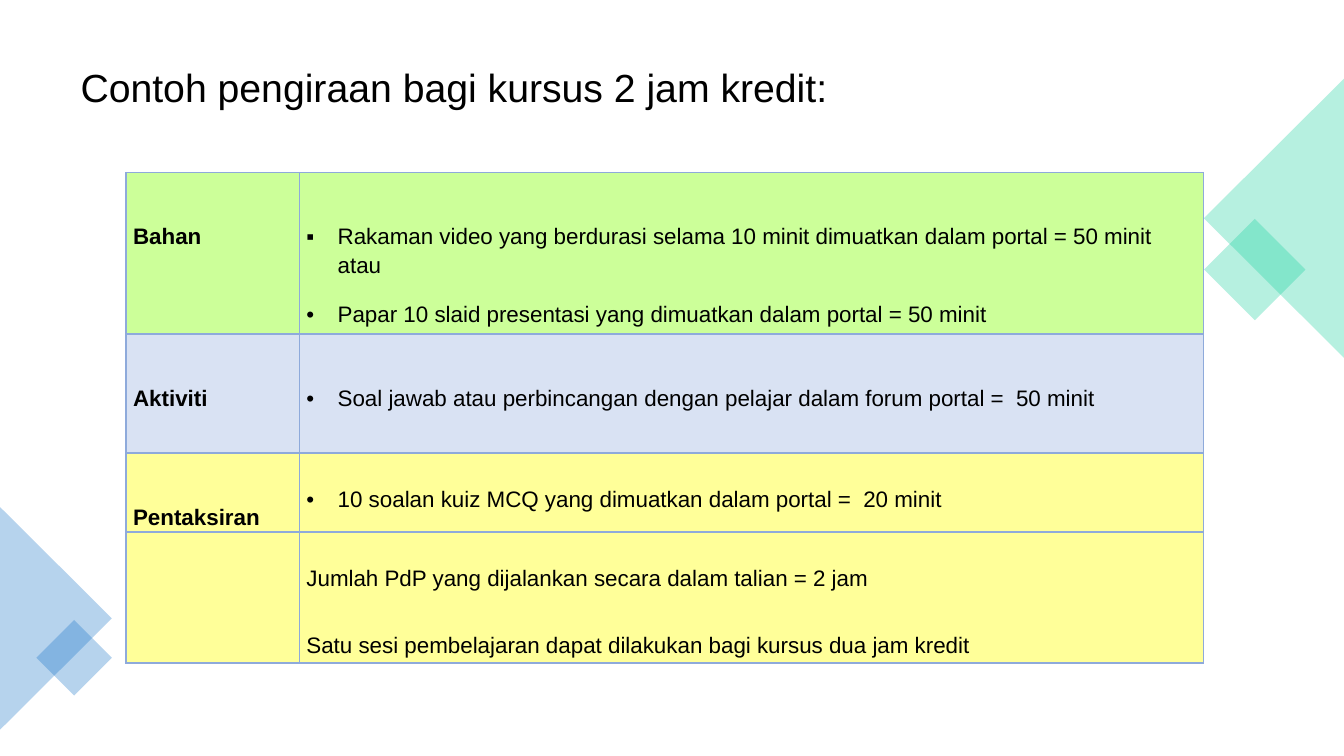
from lxml import etree
from pptx import Presentation
from pptx.dml.color import RGBColor
from pptx.enum.shapes import MSO_SHAPE
from pptx.enum.text import MSO_ANCHOR
from pptx.oxml.ns import qn
from pptx.util import Inches, Pt

SQUARE = MSO_SHAPE.RECTANGLE
TRIANGLE = MSO_SHAPE.ISOSCELES_TRIANGLE
MIDDLE = MSO_ANCHOR.MIDDLE
FONT = "Arial"
BORDER, THIN, THICK = "8EAADB", 1, 1.5
GREEN, BLUE = "10CF9B", "0F6FC6"


def color(hex_value):
    return RGBColor.from_string(hex_value)


def style_runs(paragraph, size, bold=False):
    for run in paragraph.runs:
        run.font.name = FONT
        run.font.size = Pt(size)
        run.font.bold = bold
        run.font.color.rgb = color("000000")


prs = Presentation()
prs.slide_width, prs.slide_height = Inches(13.33), Inches(7.5)
slide = prs.slides.add_slide(prs.slide_layouts[6])

# Grid of 100 columns by 100 rows
COL, ROW = prs.slide_width / 100, prs.slide_height / 100

# Title
title = slide.shapes.add_textbox(
    int(5.25 * COL), int(4.67 * ROW), int(89.5 * COL), int(14.4 * ROW)).text_frame
title.word_wrap = True
title.vertical_anchor = MIDDLE
title.text = "Contoh pengiraan bagi kursus 2 jam kredit:"
title.paragraphs[0].line_spacing = 0.9
style_runs(title.paragraphs[0], 28)

# Table content: label, fill, row height, bottom border,
# (line spacing, gap before, gap after, top margin in rows), bullets and lines
LOOSE, TIGHT = (1.15, 5, 10, 6.4), (1.07, 29, 0, 4.3)
sections = [
    ("Bahan", "CCFF99", 20.4, THICK, LOOSE, [
        ("▪", "Rakaman video yang berdurasi selama 10 minit dimuatkan dalam portal = 50 minit atau"),
        ("•", "Papar 10 slaid presentasi yang dimuatkan dalam portal = 50 minit")]),
    ("Aktiviti", "D9E2F3", 15.7, THIN, LOOSE, [
        ("•", "Soal jawab atau perbincangan dengan pelajar dalam forum portal =  50 minit")]),
    ("Pentaksiran", "FFFF99", 9.87, THICK, TIGHT, [
        ("•", "10 soalan kuiz MCQ yang dimuatkan dalam portal =  20 minit")]),
    ("", "FFFF99", 16.67, THIN, TIGHT, [
        ("", "Jumlah PdP yang dijalankan secara dalam talian = 2 jam"),
        ("", "Satu sesi pembelajaran dapat dilakukan bagi kursus dua jam kredit")]),
]
column_widths = [12.9, 67.29]
table_height = sum(section[2] for section in sections)
table = slide.shapes.add_table(
    len(sections), len(column_widths), int(9.38 * COL), int(22.8 * ROW),
    int(sum(column_widths) * COL), int(table_height * ROW)).table
table.first_row = table.horz_banding = False
for column, width in zip(table.columns, column_widths):
    column.width = int(width * COL)

top_border = THIN
for row, (label, fill, height, bottom_border, detail_spacing, details) in enumerate(sections):
    table.rows[row].height = int(height * ROW)
    contents = [(LOOSE, [("", label)]), (detail_spacing, details)]
    for column, (spacing, lines) in enumerate(contents):
        cell = table.cell(row, column)
        line_spacing, before, after, top_margin = spacing
        cell.margin_left = cell.margin_right = Inches(0.07)
        cell.margin_top, cell.margin_bottom = int(top_margin * ROW), 0

        # Borders come before the fill in the cell properties
        cell_props = cell._tc.get_or_add_tcPr()
        for side, width in (("lnL", THIN), ("lnR", THIN),
                            ("lnT", top_border), ("lnB", bottom_border)):
            edge = etree.SubElement(cell_props, qn(f"a:{side}"), w=str(Pt(width)))
            edge_fill = etree.SubElement(edge, qn("a:solidFill"))
            etree.SubElement(edge_fill, qn("a:srgbClr"), val=BORDER)
        cell.fill.solid()
        cell.fill.fore_color.rgb = color(fill)

        cell.text_frame.text = "\n".join(text for _, text in lines)
        for index, (bullet, _) in enumerate(lines):
            paragraph = cell.text_frame.paragraphs[index]
            paragraph.line_spacing = line_spacing
            paragraph.space_before = Pt(before if index else 0)
            paragraph.space_after = Pt(after)
            style_runs(paragraph, 16, bold=column == 0)
            if bullet:
                props = paragraph._p.get_or_add_pPr()
                props.set("marL", str(Inches(0.31)))
                props.set("indent", str(-Inches(0.31)))
                etree.SubElement(props, qn("a:buFont"), typeface=FONT)
                etree.SubElement(props, qn("a:buChar"), char=bullet)
    top_border = bottom_border

# Translucent corner decorations: shape, fill, rotation, place in the grid
decorations = [
    (SQUARE, GREEN, 45, (90.7, 30.93, 5.33, 9.47)),
    (TRIANGLE, GREEN, 270, (84.4, 19.6, 20.78, 18.53)),
    (TRIANGLE, BLUE, 90, (-4.13, 74.4, 16.58, 14.8)),
    (SQUARE, BLUE, 45, (3.53, 83.47, 3.98, 7.07)),
]
for kind, fill, rotation, (left, top, width, height) in decorations:
    corner = slide.shapes.add_shape(
        kind, int(left * COL), int(top * ROW), int(width * COL), int(height * ROW))
    corner.rotation = rotation
    corner.shadow.inherit = False
    corner.line.fill.background()
    corner.fill.solid()
    corner.fill.fore_color.rgb = color(fill)
    tint = corner._element.spPr.find(qn("a:solidFill")).find(qn("a:srgbClr"))
    etree.SubElement(tint, qn("a:alpha"), val="30000")

prs.save("out.pptx")
